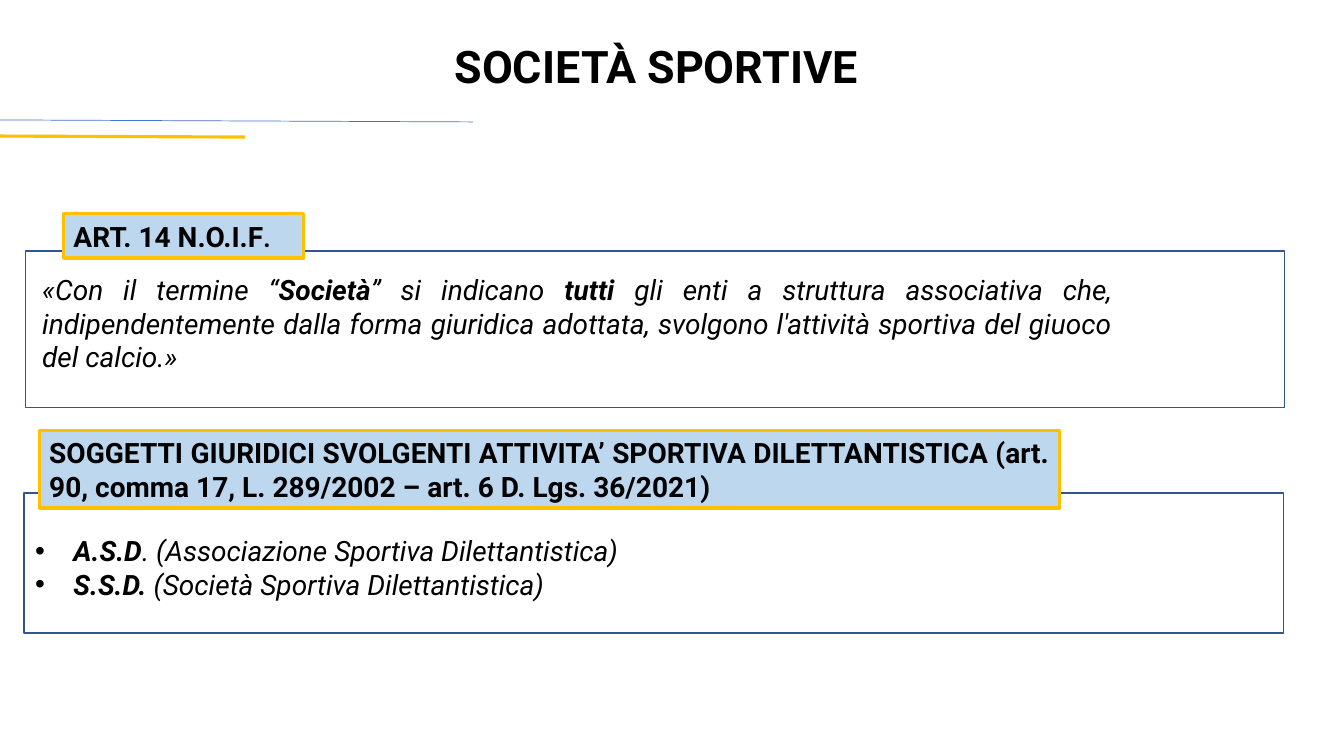
from collections import namedtuple

from lxml import etree
from pptx import Presentation
from pptx.dml.color import RGBColor
from pptx.enum.shapes import MSO_CONNECTOR, MSO_SHAPE
from pptx.enum.text import MSO_ANCHOR, PP_ALIGN
from pptx.oxml.ns import qn
from pptx.util import Inches, Pt

RECTANGLE, STRAIGHT = MSO_SHAPE.RECTANGLE, MSO_CONNECTOR.STRAIGHT
TOP, MIDDLE = MSO_ANCHOR.TOP, MSO_ANCHOR.MIDDLE
LEFT, CENTER, JUSTIFY = PP_ALIGN.LEFT, PP_ALIGN.CENTER, PP_ALIGN.JUSTIFY
COLORS = {"text": "000000", "frame": "325491", "label": "BDD7EE",
          "gold": "FFC000", "blue": "4472C4"}
FONT = "Roboto"
HANGING = Inches(0.38)
Box = namedtuple("Box", "left top width height")


def color(name):
    """Return the named palette colour."""
    return RGBColor.from_string(COLORS[name])


def within(box, left, top, width, height):
    """Return a box given in percent of its parent box."""
    return Box(int(box.left + box.width * left / 100),
               int(box.top + box.height * top / 100),
               int(box.width * width / 100),
               int(box.height * height / 100))


def add_bullet(paragraph):
    """Give a paragraph a round bullet and a hanging indent."""
    properties = paragraph._p.get_or_add_pPr()
    properties.set("marL", str(HANGING))
    properties.set("indent", str(-HANGING))
    bullet_color = etree.SubElement(properties, qn("a:buClr"))
    etree.SubElement(bullet_color, qn("a:srgbClr"), val=COLORS["text"])
    etree.SubElement(properties, qn("a:buFont"), typeface="Arial")
    etree.SubElement(properties, qn("a:buChar"), char="•")


def write(holder, paragraphs, size=20, italic=False, align=JUSTIFY,
          anchor=MIDDLE, bullets=False):
    """Fill a shape with paragraphs of (text, bold, optional size) runs."""
    frame = holder.text_frame
    frame.word_wrap = True
    frame.vertical_anchor = anchor
    for index, runs in enumerate(paragraphs):
        paragraph = frame.add_paragraph() if index else frame.paragraphs[0]
        paragraph.alignment = align
        if bullets:
            add_bullet(paragraph)
        for text, bold, *own_size in runs:
            run = paragraph.add_run()
            run.text = text
            run.font.name = FONT
            run.font.size = Pt(own_size[0] if own_size else size)
            run.font.bold = bold
            run.font.italic = italic
            run.font.color.rgb = color("text")


def add_rectangle(slide, box, line, weight, fill=None):
    """Add an outlined rectangle, filled when a colour is named."""
    rectangle = slide.shapes.add_shape(RECTANGLE, *box)
    rectangle.shadow.inherit = False
    rectangle.line.color.rgb = color(line)
    rectangle.line.width = Pt(weight)
    if fill:
        rectangle.fill.solid()
        rectangle.fill.fore_color.rgb = color(fill)
    else:
        rectangle.fill.background()
    return rectangle


def add_rule(slide, box, line, weight):
    """Draw a slightly sloping rule across a box."""
    rule = slide.shapes.add_connector(
        STRAIGHT, box.left, box.top, box.left + box.width, box.top + box.height)
    rule.line.color.rgb = color(line)
    rule.line.width = Pt(weight)
    etree.SubElement(rule._element.spPr, qn("a:effectLst"))


def add_header(slide, box):
    """Place the title and the two rules below it."""
    title = slide.shapes.add_textbox(*within(box, 17.55, 24.26, 62.57, 47.06))
    write(title, [[("SOCIETÀ SPORTIVE", True)]], size=32, align=CENTER, anchor=TOP)
    add_rule(slide, within(box, 0, 87.5, 35.18, 1.47), "blue", 0.5)
    add_rule(slide, within(box, -0.08, 99.26, 18.3, 0.74), "gold", 2.25)


def add_section(slide, box, label_share, label, label_align,
                body_share, body, bullets=False):
    """Place a framed body text with a label over its upper edge."""
    body_text = slide.shapes.add_textbox(*within(box, *body_share))
    write(body_text, body, italic=True, bullets=bullets)
    add_rectangle(slide, box, "frame", 1)
    tag = add_rectangle(slide, within(box, *label_share), "gold", 2.25, "label")
    write(tag, [label], align=label_align)


def main():
    """Build and save the slide."""
    deck = Presentation()
    deck.slide_width, deck.slide_height = Inches(13.33), Inches(7.5)
    slide = deck.slides.add_slide(deck.slide_layouts[6])
    page = Box(0, 0, deck.slide_width, deck.slide_height)

    add_header(slide, within(page, 0, 0, 100, 18.13))
    add_section(
        slide, within(page, 1.88, 33.2, 93.7, 20.67),
        (3.04, -23.87, 19.06, 28.39),
        [("ART. 14 N.O.I.F", True), (".", True, 18)], LEFT,
        (0.56, 10.32, 86.55, 71.61),
        [[("«Con il termine “", False), ("Società", True),
          ("” si indicano ", False), ("tutti", True),
          (" gli enti a struttura associativa che, indipendentemente dalla "
           "forma giuridica adottata, svolgono l'attività sportiva del giuoco "
           "del calcio.»", False)]])
    add_section(
        slide, within(page, 1.8, 65.2, 93.7, 18.53),
        (1.2, -44.6, 81.03, 55.4),
        [("SOGGETTI GIURIDICI SVOLGENTI ATTIVITA’ SPORTIVA DILETTANTISTICA "
          "(art. 90, comma 17, L. 289/2002 – art. 6 D. Lgs. 36/2021)", True)],
        JUSTIFY,
        (0.08, 25.18, 71.02, 56.12),
        [[("A.S.D", True), (". (Associazione Sportiva Dilettantistica)", False)],
         [("S.S.D.", True), (" (Società Sportiva Dilettantistica)", False)]],
        bullets=True)
    deck.save("out.pptx")


if __name__ == "__main__":
    main()
